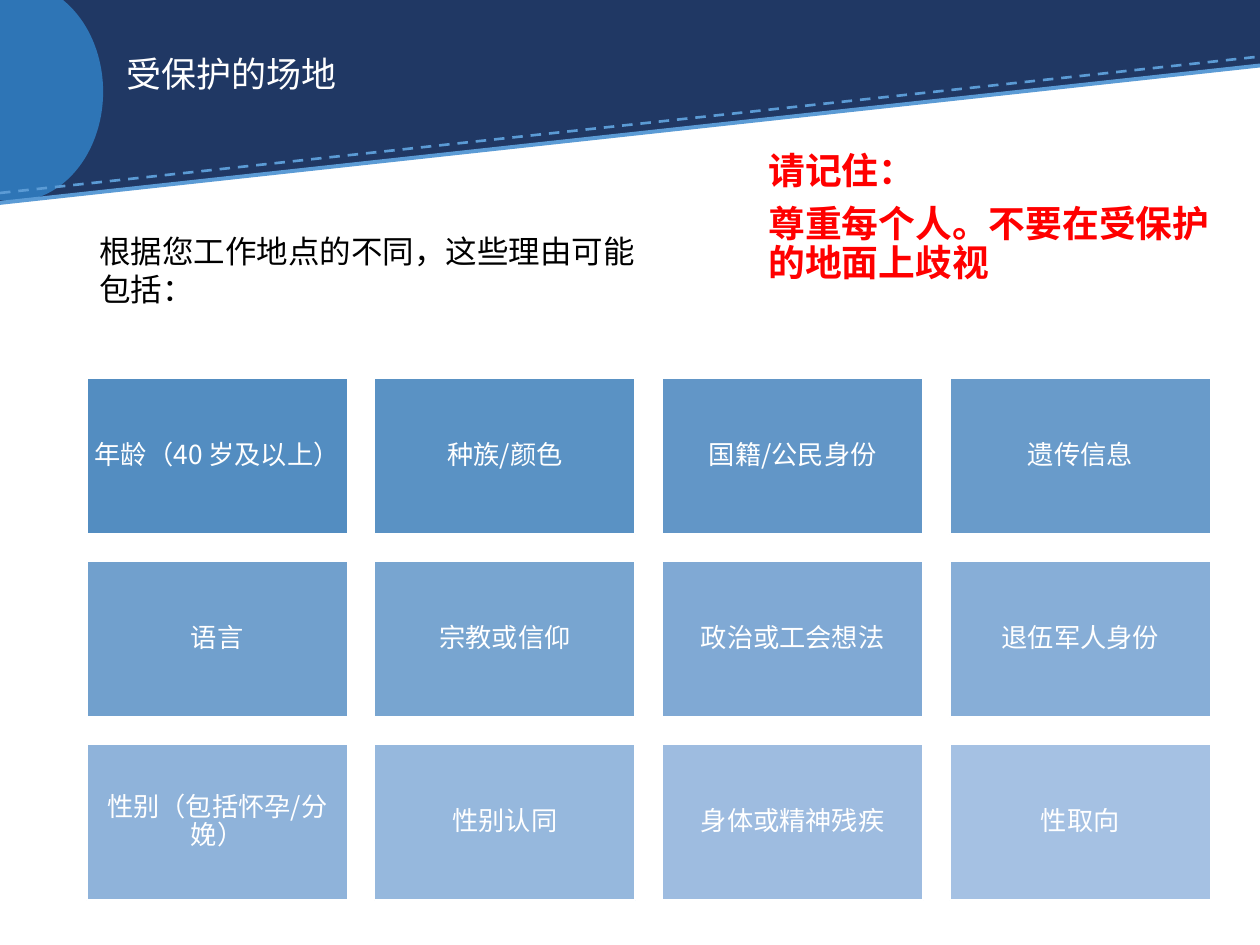
from dataclasses import dataclass

from lxml import etree
from pptx import Presentation
from pptx.dml.color import RGBColor
from pptx.enum.dml import MSO_LINE
from pptx.enum.shapes import MSO_CONNECTOR, MSO_SHAPE
from pptx.enum.text import MSO_ANCHOR, MSO_AUTO_SIZE, PP_ALIGN
from pptx.oxml.ns import qn
from pptx.util import Cm, Pt

HEADING = "受保护的场地"
INTRO = "根据您工作地点的不同，这些理由可能包括："
REMINDER = ["请记住：", "尊重每个人。不要在受保护的地面上歧视"]
GROUNDS = [
    "年龄（40 岁及以上）", "种族/颜色", "国籍/公民身份", "遗传信息",
    "语言", "宗教或信仰", "政治或工会想法", "退伍军人身份",
    "性别（包括怀孕/分娩）", "性别认同", "身体或精神残疾", "性取向",
]


@dataclass(frozen=True)
class Theme:
    font: str = "Noto Sans CJK SC"
    navy: str = "203864"
    blue: str = "2E75B6"
    accent: str = "5B9BD5"
    white: str = "FFFFFF"
    black: str = "000000"
    red: str = "FF0000"
    first_ground: str = "538DC1"
    last_ground: str = "A5C1E3"
    heading_size: float = 20
    reminder_size: float = 21
    intro_size: float = 18
    ground_size: float = 15


THEME = Theme()
WIDTH, HEIGHT = 25.4, 19.05
COLUMNS = 4
GRID_LEFT, GRID_TOP = 1.75, 7.62
TILE_WIDTH, TILE_HEIGHT, GAP = 5.26, 3.15, 0.54


def rgb(value):
    return RGBColor.from_string(value)


def blend(start, end, share):
    pairs = zip(rgb(start), rgb(end))
    return str(RGBColor(*(round(a + (b - a) * share) for a, b in pairs)))


def write(frame, lines, size, color, bold=False, align=PP_ALIGN.LEFT, spacing=0.9):
    frame.text = "\n".join(lines)
    frame.word_wrap = True
    for paragraph in frame.paragraphs:
        paragraph.alignment = align
        paragraph.line_spacing = spacing
        for run in paragraph.runs:
            run.font.name = THEME.font
            run.font.size = Pt(size)
            run.font.bold = bold
            run.font.color.rgb = rgb(color)
            east_asian = etree.Element(qn("a:ea"), typeface=THEME.font)
            run.font._element.find(qn("a:latin")).addnext(east_asian)


def add_block(slide, kind, box, fill):
    block = slide.shapes.add_shape(kind, *map(Cm, box))
    block.shadow.inherit = False
    block.fill.solid()
    block.fill.fore_color.rgb = rgb(fill)
    block.line.fill.background()
    return block


def add_slope(slide, start, end, weight):
    slope = slide.shapes.add_connector(
        MSO_CONNECTOR.STRAIGHT, Cm(0), Cm(start), Cm(WIDTH), Cm(end))
    slope.line.color.rgb = rgb(THEME.accent)
    slope.line.width = Pt(weight)
    etree.SubElement(slope._element.spPr, qn("a:effectLst"))
    return slope


def add_banner(slide):
    add_block(slide, MSO_SHAPE.RECTANGLE, (0, 0, WIDTH, 1.32), THEME.navy)
    wedge = add_block(slide, MSO_SHAPE.RIGHT_TRIANGLE, (0, 1.3, WIDTH, 2.77), THEME.navy)
    wedge._element.spPr.xfrm.set("flipV", "1")
    add_block(slide, MSO_SHAPE.OVAL, (-1.5, -0.36, 3.58, 4.42), THEME.blue)
    add_slope(slide, 3.89, 1.14, 1.5).line.dash_style = MSO_LINE.DASH
    add_slope(slide, 4.09, 1.32, 2.25)


def add_heading(slide):
    heading = slide.shapes.title
    heading.left, heading.top, heading.width, heading.height = map(Cm, (2.29, 0.51, 20.5, 2.03))
    write(heading.text_frame, [HEADING], THEME.heading_size, THEME.white)
    heading.text_frame.vertical_anchor = MSO_ANCHOR.MIDDLE
    heading.text_frame.auto_size = MSO_AUTO_SIZE.NONE
    slide.shapes._spTree.append(heading._element)


def add_reminder(slide):
    reminder = slide.shapes.add_textbox(Cm(15.24), Cm(2.95), Cm(9.6), Cm(4.32)).text_frame
    write(reminder, REMINDER, THEME.reminder_size, THEME.red, bold=True)
    for paragraph in reminder.paragraphs[1:]:
        paragraph.space_before = Pt(7.5)


def add_grounds(slide):
    for index, ground in enumerate(GROUNDS):
        row, column = divmod(index, COLUMNS)
        box = (GRID_LEFT + column * (TILE_WIDTH + GAP),
               GRID_TOP + row * (TILE_HEIGHT + GAP), TILE_WIDTH, TILE_HEIGHT)
        fill = blend(THEME.first_ground, THEME.last_ground, index / (len(GROUNDS) - 1))
        tile = add_block(slide, MSO_SHAPE.RECTANGLE, box, fill)
        tile.line.color.rgb = rgb(THEME.white)
        tile.line.width = Pt(1)
        frame = tile.text_frame
        frame.margin_left = frame.margin_right = Cm(0.15)
        frame.margin_top = frame.margin_bottom = Cm(0.15)
        frame.vertical_anchor = MSO_ANCHOR.MIDDLE
        write(frame, [ground], THEME.ground_size, THEME.white, align=PP_ALIGN.CENTER)


def add_intro(slide):
    intro = slide.shapes.add_textbox(Cm(GRID_LEFT), Cm(4.55), Cm(11.71), Cm(1.02)).text_frame
    write(intro, [INTRO], THEME.intro_size, THEME.black, spacing=1.0)


def main():
    deck = Presentation()
    deck.slide_width, deck.slide_height = Cm(WIDTH), Cm(HEIGHT)
    slide = deck.slides.add_slide(deck.slide_layouts[5])
    add_banner(slide)
    add_heading(slide)
    add_reminder(slide)
    add_grounds(slide)
    add_intro(slide)
    deck.save("out.pptx")


if __name__ == "__main__":
    main()
